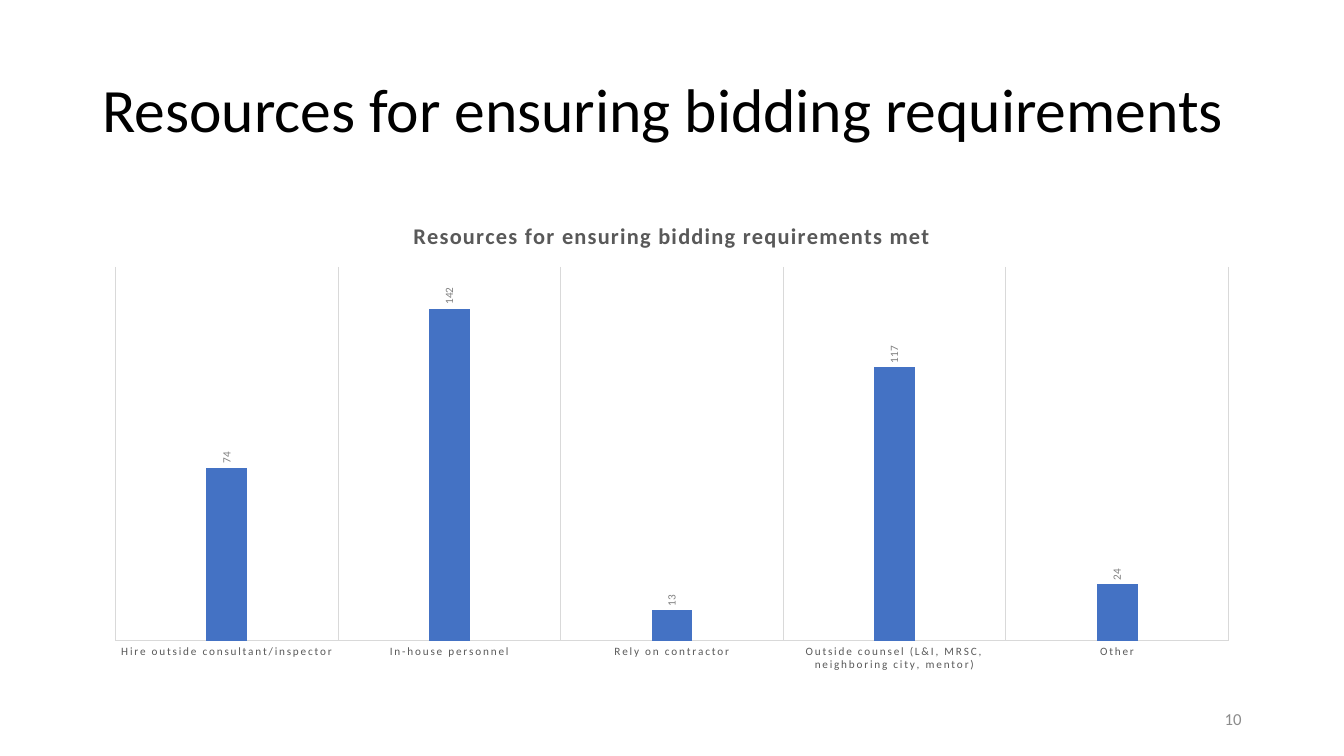
import pptx
import pptx.chart.data
import pptx.dml.color
import pptx.enum.chart
import pptx.enum.text
import pptx.util
from dataclasses import dataclass

PX = 9525  # EMU per px, 96 px to the inch


@dataclass(frozen=True)
class Theme:
    font: str = "Calibri"
    ink: str = "000000"
    axis_text: str = "595959"
    label_text: str = "808080"
    number_text: str = "8C8C8C"
    rule: str = "D9D9D9"
    column: str = "4472C4"
    title_size: int = 44
    chart_title_size: int = 16
    number_size: int = 12
    chart_size: int = 10
    label_size: int = 8


THEME = Theme()
RESOURCES = {
    "Hire outside consultant/inspector": 74,
    "In-house personnel": 142,
    "Rely on contractor": 13,
    "Outside counsel (L&I, MRSC, neighboring city, mentor)": 117,
    "Other": 24,
}


def px(*lengths):
    return [pptx.util.Emu(length * PX) for length in lengths]


def rgb(color):
    return pptx.dml.color.RGBColor.from_string(color)


def style_font(font, size, color, bold=False):
    font.name = THEME.font
    font.size = pptx.util.Pt(size)
    font.bold = bold
    font.color.rgb = rgb(color)


def style_rule(line):
    line.color.rgb = rgb(THEME.rule)
    line.width = pptx.util.Pt(0.75)


def add_text(page, place, text, size, color, align):
    box = page.shapes.add_textbox(*px(*place))
    frame = box.text_frame
    frame.word_wrap = True
    frame.vertical_anchor = pptx.enum.text.MSO_ANCHOR.MIDDLE
    para = frame.paragraphs[0]
    para.alignment = align
    para.line_spacing = 0.9
    span = para.add_run()
    span.text = text
    style_font(span.font, size, color)


def add_column_chart(page, place, title, values):
    data = pptx.chart.data.CategoryChartData()
    data.categories = list(values)
    data.add_series("Series 1", list(values.values()))
    kind = pptx.enum.chart.XL_CHART_TYPE.COLUMN_CLUSTERED
    chart = page.shapes.add_chart(kind, *px(*place), data).chart
    style_font(chart.font, THEME.chart_size, THEME.ink)
    chart.has_legend = False

    # Chart title, with spaced letters
    span = chart.chart_title.text_frame.paragraphs[0].add_run()
    span.text = title
    style_font(span.font, THEME.chart_title_size, THEME.axis_text, bold=True)
    span.font._element.set("spc", "100")
    chart.chart_title.include_in_layout = False

    # Columns and their upright values
    plot = chart.plots[0]
    plot.vary_by_categories = False
    plot.gap_width = 444
    plot.overlap = -90
    fill = plot.series[0].format.fill
    fill.solid()
    fill.fore_color.rgb = rgb(THEME.column)
    plot.has_data_labels = True
    labels = plot.data_labels
    labels.show_value = True
    labels.position = pptx.enum.chart.XL_LABEL_POSITION.OUTSIDE_END
    style_font(labels.font, THEME.label_size, THEME.label_text)
    labels._element.find(".//" + pptx.oxml.ns.qn("a:bodyPr")).set("rot", "-5400000")

    # Axes
    axis = chart.category_axis
    axis.major_tick_mark = pptx.enum.chart.XL_TICK_MARK.NONE
    axis.has_major_gridlines = True
    style_rule(axis.major_gridlines.format.line)
    style_rule(axis.format.line)
    style_font(axis.tick_labels.font, THEME.label_size, THEME.axis_text)
    axis.tick_labels.font._element.set("spc", "120")
    scale = chart.value_axis
    scale.minimum_scale, scale.maximum_scale = 0, 160
    scale.has_major_gridlines = False
    scale.visible = False


def main():
    deck = pptx.Presentation()
    deck.slide_width, deck.slide_height = px(1280, 720)
    page = deck.slides.add_slide(deck.slide_layouts[6])
    align = pptx.enum.text.PP_ALIGN

    # Heading
    add_text(page, (88, 38, 1104, 139), "Resources for ensuring bidding requirements",
             THEME.title_size, THEME.ink, align.LEFT)
    # Survey answers
    add_column_chart(page, (88, 192, 1104, 457),
                     "Resources for ensuring bidding requirements met", RESOURCES)
    # Page number
    add_text(page, (904, 667, 288, 38), "10",
             THEME.number_size, THEME.number_text, align.RIGHT)

    deck.save("out.pptx")


if __name__ == "__main__":
    main()
